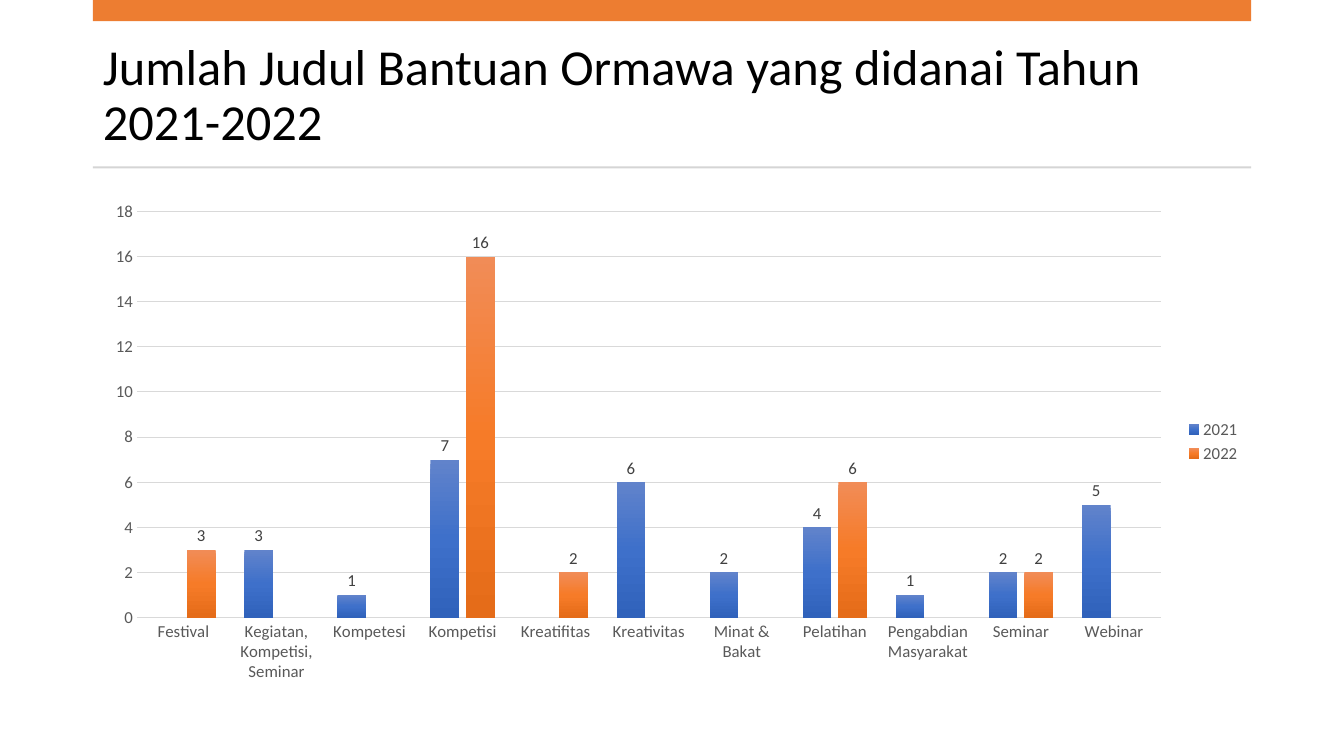
from dataclasses import dataclass

from lxml.etree import SubElement
from pptx import Presentation
from pptx.chart.chart import Chart
from pptx.chart.data import CategoryChartData
from pptx.chart.series import BarSeries
from pptx.dml.color import RGBColor
from pptx.enum.chart import XL_CHART_TYPE, XL_LABEL_POSITION, XL_LEGEND_POSITION, XL_TICK_MARK
from pptx.enum.shapes import MSO_SHAPE
from pptx.enum.text import MSO_ANCHOR, MSO_AUTO_SIZE, PP_ALIGN
from pptx.oxml.ns import qn
from pptx.slide import Slide
from pptx.text.text import Font
from pptx.util import Inches, Pt

COLORS = {
    "title": "000000",
    "accent": "ED7D31",
    "rule": "D5D5D5",
    "grid": "D9D9D9",
    "axis_text": "595959",
    "label_text": "404040",
}
FONT = "Calibri"
LEFT, WIDTH = 0.92, 11.49


@dataclass
class Band:
    top: float
    height: float
    color: str


@dataclass
class YearSeries:
    name: str
    values: list[int | None]
    gradient: tuple[str, str, str]


BANDS = [Band(0, 0.21, "accent"), Band(1.65, 0.02, "rule")]
CATEGORIES = [
    "Festival", "Kegiatan, Kompetisi, Seminar", "Kompetesi", "Kompetisi",
    "Kreatifitas", "Kreativitas", "Minat & Bakat", "Pelatihan",
    "Pengabdian Masyarakat", "Seminar", "Webinar",
]
YEARS = [
    YearSeries("2021", [None, 3, 1, 7, None, 6, 2, 4, 1, 2, 5],
               ("6183CB", "3E70CA", "3062BB")),
    YearSeries("2022", [3, None, None, 16, 2, None, None, 6, None, 2, None],
               ("F18C57", "F67B28", "E56C19")),
]


def color(name: str) -> RGBColor:
    return RGBColor.from_string(COLORS[name])


def style_font(font: Font, size: float, color_name: str) -> None:
    font.name = FONT
    font.size = Pt(size)
    font.bold = False
    font.color.rgb = color(color_name)


def add_title(page: Slide, text: str) -> None:
    title = page.shapes.title
    title.left, title.top = Inches(LEFT), Inches(0.37)
    title.width, title.height = Inches(WIDTH), Inches(1.18)
    frame = title.text_frame
    frame.text = text
    frame.word_wrap = True
    frame.auto_size = MSO_AUTO_SIZE.NONE
    frame.vertical_anchor = MSO_ANCHOR.MIDDLE
    para = frame.paragraphs[0]
    para.alignment = PP_ALIGN.LEFT
    para.line_spacing = 0.9
    style_font(para.font, 36, "title")


def add_band(page: Slide, band: Band) -> None:
    box = page.shapes.add_shape(MSO_SHAPE.RECTANGLE, Inches(LEFT), Inches(band.top),
                                Inches(WIDTH), Inches(band.height))
    box.shadow.inherit = False
    box.fill.solid()
    box.fill.fore_color.rgb = color(band.color)
    box.line.fill.background()


def fill_gradient(series: BarSeries, stops: tuple[str, str, str]) -> None:
    """Fill the columns from top to bottom with evenly spaced stops."""
    series.format.fill.gradient()
    gradient = series.format.fill._fill._gradFill
    for child in list(gradient):
        gradient.remove(child)
    stop_list = SubElement(gradient, qn("a:gsLst"))
    for index, value in enumerate(stops):
        stop = SubElement(stop_list, qn("a:gs"), pos=str(index * 50000))
        SubElement(stop, qn("a:srgbClr"), val=value)
    SubElement(gradient, qn("a:lin"), ang="5400000", scaled="0")


def format_axes(chart: Chart) -> None:
    for axis in (chart.category_axis, chart.value_axis):
        axis.major_tick_mark = XL_TICK_MARK.NONE
        axis.minor_tick_mark = XL_TICK_MARK.NONE
        style_font(axis.tick_labels.font, 12, "axis_text")
    category_line = chart.category_axis.format.line
    category_line.color.rgb = color("grid")
    category_line.width = Pt(1)

    value_axis = chart.value_axis
    value_axis.minimum_scale, value_axis.maximum_scale = 0, 18
    value_axis.major_unit = 2
    value_axis.format.line.fill.background()
    grid_line = value_axis.major_gridlines.format.line
    grid_line.color.rgb = color("grid")
    grid_line.width = Pt(0.75)


def add_year_chart(page: Slide) -> None:
    data = CategoryChartData()
    data.categories = CATEGORIES
    for year in YEARS:
        data.add_series(year.name, year.values)
    chart = page.shapes.add_chart(XL_CHART_TYPE.COLUMN_CLUSTERED, Inches(LEFT), Inches(1.9),
                                  Inches(WIDTH), Inches(4.96), data).chart
    chart.has_title = False
    style_font(chart.font, 10, "title")
    format_axes(chart)

    # Legend
    chart.has_legend = True
    chart.legend.position = XL_LEGEND_POSITION.RIGHT
    chart.legend.include_in_layout = False
    style_font(chart.legend.font, 12, "axis_text")

    # Columns and their value labels
    plot = chart.plots[0]
    plot.gap_width, plot.overlap = 100, -24
    plot.vary_by_categories = False
    for series, year in zip(plot.series, YEARS):
        fill_gradient(series, year.gradient)
        labels = series.data_labels
        labels.show_value = True
        labels.position = XL_LABEL_POSITION.OUTSIDE_END
        style_font(labels.font, 12, "label_text")


def main() -> None:
    deck = Presentation()
    deck.slide_width, deck.slide_height = Inches(13.33), Inches(7.5)
    page = deck.slides.add_slide(deck.slide_layouts[5])
    add_title(page, "Jumlah Judul Bantuan Ormawa yang didanai Tahun 2021-2022")
    for band in BANDS:
        add_band(page, band)
    add_year_chart(page)
    deck.save("out.pptx")


if __name__ == "__main__":
    main()
